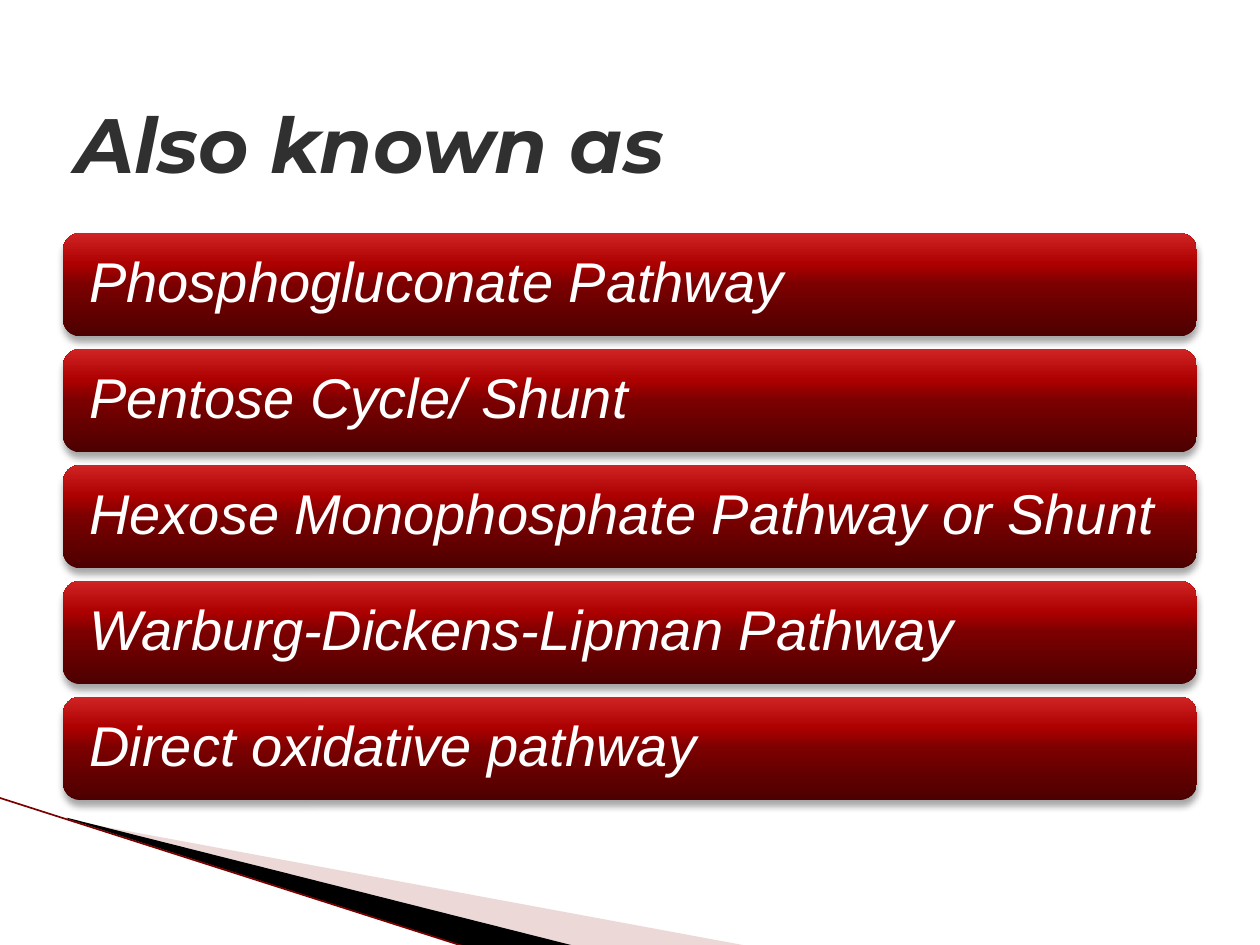
from lxml import etree
from pptx import Presentation
from pptx import util as u
from pptx.dml.color import RGBColor
from pptx.enum import shapes, text
from pptx.oxml import parse_xml
from pptx.oxml.ns import nsdecls, qn

TITLE_GREY = RGBColor(0x30, 0x30, 0x30)
WHITE = RGBColor(0xFF, 0xFF, 0xFF)
BLACK = RGBColor(0x00, 0x00, 0x00)
ROSE = RGBColor(0xD2, 0x9E, 0x9E)
DARK_RED = RGBColor(0x7B, 0x00, 0x00)
BAR_STOPS = [
    (0, RGBColor(0x4C, 0x00, 0x00)),
    (50, DARK_RED),
    (70, RGBColor(0xAD, 0x00, 0x00)),
    (100, RGBColor(0xD0, 0x24, 0x24)),
]

NAMES = [
    "Phosphogluconate Pathway",
    "Pentose Cycle/ Shunt",
    "Hexose Monophosphate Pathway or Shunt",
    "Warburg-Dickens-Lipman Pathway",
    "Direct oxidative pathway",
]
BAR_TOP, BAR_STEP = 1.85, 0.92


def add_wedge(page, points, color, opacity=100):
    corners = [(u.Inches(x), u.Inches(y)) for x, y in points]
    builder = page.shapes.build_freeform(*corners[0])
    builder.add_line_segments(corners[1:], close=True)
    wedge = builder.convert_to_shape()
    wedge.shadow.inherit = False
    wedge.fill.solid()
    wedge.fill.fore_color.rgb = color
    wedge.line.fill.background()
    if opacity < 100:
        tone = wedge.fill._xPr.find(".//" + qn("a:srgbClr"))
        etree.SubElement(tone, qn("a:alpha"), val=str(opacity * 1000))


def add_edge(page, start, end):
    ends = [u.Inches(value) for value in start + end]
    edge = page.shapes.add_connector(shapes.MSO_CONNECTOR.STRAIGHT, *ends)
    edge.line.color.rgb = DARK_RED
    edge.line.width = u.Pt(0.95)
    etree.SubElement(edge._element.spPr, qn("a:effectLst"))


def add_gradient_and_shadow(shape):
    stops = "".join(
        f'<a:gs pos="{position * 1000}"><a:srgbClr val="{color}"/></a:gs>'
        for position, color in BAR_STOPS
    )
    gradient = parse_xml(
        f'<a:gradFill {nsdecls("a")} rotWithShape="1"><a:gsLst>{stops}</a:gsLst>'
        '<a:lin ang="16200000" scaled="0"/></a:gradFill>'
    )
    properties = shape._element.spPr
    properties.replace(properties.find(qn("a:noFill")), gradient)
    shadow = parse_xml(
        f'<a:outerShdw {nsdecls("a")} blurRad="{u.Pt(4)}" dist="{u.Pt(3)}" '
        'dir="5400000" rotWithShape="0"><a:srgbClr val="000000">'
        '<a:alpha val="35000"/></a:srgbClr></a:outerShdw>'
    )
    properties.find(qn("a:effectLst")).append(shadow)


def style_font(font, name, size, color):
    font.name = name
    font.size = u.Pt(size)
    font.italic = True
    font.color.rgb = color


def add_bar(page, top, wording):
    bar = page.shapes.add_shape(
        shapes.MSO_SHAPE.ROUNDED_RECTANGLE,
        u.Inches(0.5), u.Inches(top), u.Inches(9), u.Inches(0.82),
    )
    bar.shadow.inherit = False
    bar.fill.background()
    bar.line.fill.background()
    add_gradient_and_shadow(bar)
    frame = bar.text_frame
    frame.word_wrap = True
    frame.vertical_anchor = text.MSO_ANCHOR.MIDDLE
    frame.margin_left = frame.margin_right = u.Inches(0.17)
    para = frame.paragraphs[0]
    para.text = wording
    para.alignment = text.PP_ALIGN.LEFT
    para.line_spacing = 0.9
    style_font(para.font, "Arial", 32, WHITE)


def add_title(page, wording):
    box = page.shapes.add_textbox(
        u.Inches(0.5), u.Inches(0.3), u.Inches(9), u.Inches(1.25)
    )
    frame = box.text_frame
    frame.word_wrap = True
    frame.vertical_anchor = text.MSO_ANCHOR.BOTTOM
    para = frame.paragraphs[0]
    para.text = wording
    style_font(para.font, "Montserrat", 44, TITLE_GREY)
    para.font.bold = True


def main():
    deck = Presentation()
    deck.slide_width, deck.slide_height = u.Inches(10), u.Inches(7.5)
    page = deck.slides.add_slide(deck.slide_layouts[6])

    # Corner decoration
    add_wedge(page, [(0.55, 6.51), (5.95, 7.51), (4.56, 7.51), (0.55, 6.5)], ROSE, 40)
    add_wedge(page, [(0.53, 6.49), (4.57, 7.51), (3.72, 7.52), (0.54, 6.5)], BLACK)
    add_edge(page, (-0.01, 6.33), (3.71, 7.52))

    # List of alternative names
    for index, name in enumerate(NAMES):
        add_bar(page, BAR_TOP + index * BAR_STEP, name)

    # Title
    add_title(page, "Also known as")

    deck.save("out.pptx")


if __name__ == "__main__":
    main()
